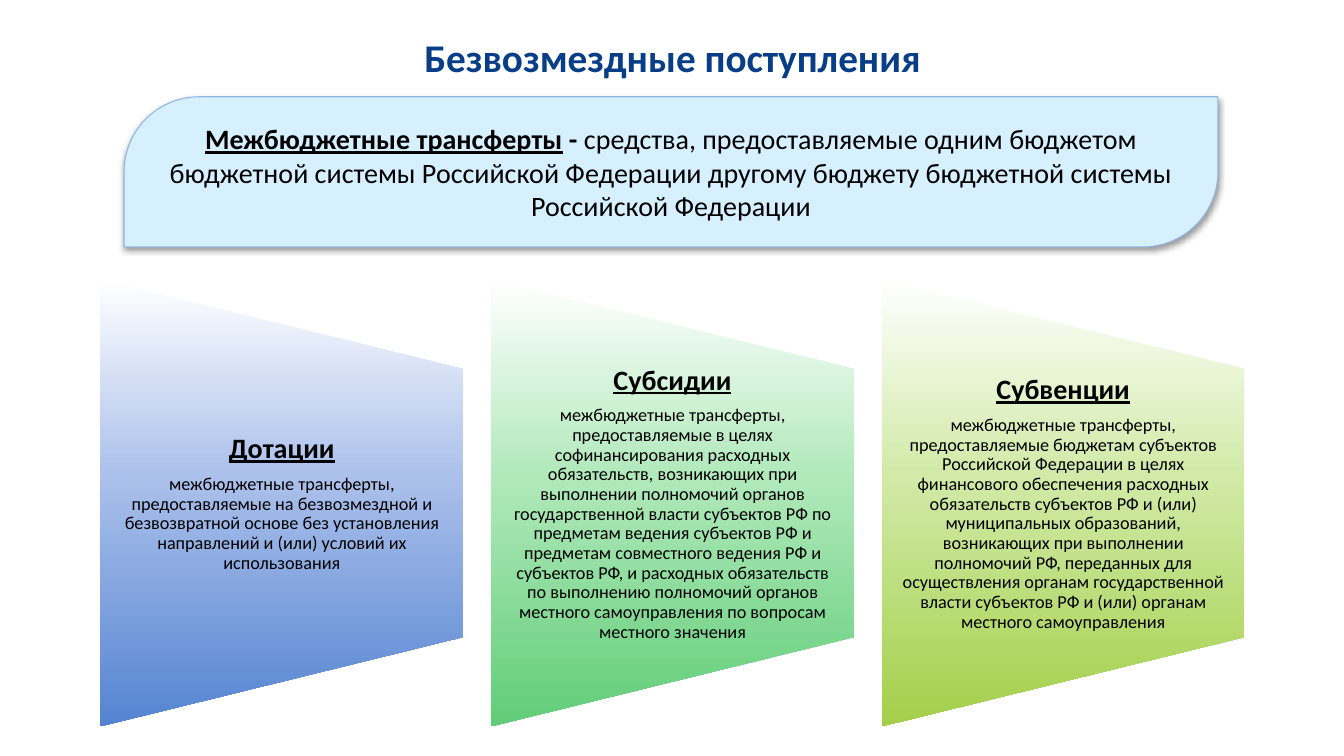
"""Build a slide that explains the three kinds of interbudgetary transfers."""
from copy import deepcopy
from dataclasses import dataclass

from lxml import etree
from pptx import Presentation
from pptx import util as u
from pptx.dml.color import RGBColor
from pptx.enum import shapes, text
from pptx.oxml import ns

FONT = "Calibri"
COLORS = {
    "title": "073E87",
    "text": "000000",
    "banner": "D6F0FF",
    "border": "8FB5E5",
    "shadow": "000000",
    "fade": "FFFFFF",
}
FIRST_LEFT, PITCH = 0.58, 3.875
PANEL_TOP, PANEL_LENGTH, PANEL_WIDTH = 3.19, 4.43, 3.6
TEXT_TOP, TEXT_HEIGHT = 3.67, 2.66


@dataclass
class Transfer:
    name: str
    meaning: str
    middle: str
    bottom: str


TRANSFERS = [
    Transfer(
        "Дотации",
        "межбюджетные трансферты, предоставляемые на безвозмездной и безвозвратной "
        "основе без установления направлений и (или) условий их использования",
        "ABC0EB", "5484D1",
    ),
    Transfer(
        "Субсидии",
        "межбюджетные трансферты, предоставляемые в целях софинансирования расходных "
        "обязательств, возникающих при выполнении полномочий органов государственной "
        "власти субъектов РФ по предметам ведения субъектов РФ и предметам совместного "
        "ведения РФ и субъектов РФ, и расходных обязательств по выполнению полномочий "
        "органов местного самоуправления по вопросам местного значения",
        "B1E9BB", "61CD78",
    ),
    Transfer(
        "Субвенции",
        "межбюджетные трансферты, предоставляемые бюджетам субъектов Российской "
        "Федерации в целях финансового обеспечения расходных обязательств субъектов РФ "
        "и (или) муниципальных образований, возникающих при выполнении полномочий РФ, "
        "переданных для осуществления органам государственной власти субъектов РФ "
        "и (или) органам местного самоуправления",
        "D1EAA7", "A4CF4A",
    ),
]


def style(span, size: float, color: str = "text", bold: bool = False,
          underline: bool = False) -> None:
    span.font.name = FONT
    span.font.size = u.Pt(size)
    span.font.bold = bold
    span.font.underline = underline
    span.font.color.rgb = RGBColor.from_string(COLORS[color])


def add_title(page) -> None:
    box = page.shapes.add_textbox(u.Inches(4.08), u.Inches(0.28),
                                  u.Inches(5.18), u.Inches(0.57))
    frame = box.text_frame
    frame.word_wrap = False
    frame.auto_size = text.MSO_AUTO_SIZE.SHAPE_TO_FIT_TEXT
    frame.text = "Безвозмездные поступления"
    para = frame.paragraphs[0]
    para.alignment = text.PP_ALIGN.CENTER
    style(para.runs[0], 28, "title", bold=True)


def add_shadow(shape) -> None:
    shape.shadow.inherit = False
    effects = shape._element.spPr.find(ns.qn("a:effectLst"))
    shadow = etree.SubElement(effects, ns.qn("a:outerShdw"), blurRad=str(u.Pt(4)),
                              dist=str(u.Pt(2)), dir="5400000", rotWithShape="0")
    color = etree.SubElement(shadow, ns.qn("a:srgbClr"), val=COLORS["shadow"])
    etree.SubElement(color, ns.qn("a:alpha"), val="38000")


def add_banner(page) -> None:
    banner = page.shapes.add_shape(
        shapes.MSO_SHAPE.ROUND_2_DIAG_RECTANGLE,
        u.Inches(1.23), u.Inches(0.96), u.Inches(10.85), u.Inches(1.49))
    banner.adjustments[0] = 0.5
    banner.adjustments[1] = 0
    banner.fill.solid()
    banner.fill.fore_color.rgb = RGBColor.from_string(COLORS["banner"])
    banner.line.color.rgb = RGBColor.from_string(COLORS["border"])
    banner.line.width = u.Pt(0.75)
    add_shadow(banner)
    frame = banner.text_frame
    frame.word_wrap = True
    frame.vertical_anchor = text.MSO_ANCHOR.MIDDLE
    para = frame.paragraphs[0]
    para.alignment = text.PP_ALIGN.CENTER
    for wording, bold, underline in (
        ("Межбюджетные трансферты", True, True),
        (" - ", True, False),
        ("средства, предоставляемые одним бюджетом бюджетной системы Российской "
         "Федерации другому бюджету бюджетной системы Российской Федерации", False, False),
    ):
        span = para.add_run()
        span.text = wording
        style(span, 20, bold=bold, underline=underline)


def fill_downward(shape, middle: str, bottom: str) -> None:
    shape.fill.gradient()
    shape.fill.gradient_angle = 270
    gradient = shape._element.spPr.find(ns.qn("a:gradFill"))
    gradient.set("rotWithShape", "0")
    stop_list = gradient.find(ns.qn("a:gsLst"))
    stop_list.append(deepcopy(stop_list[-1]))
    stops = ((0, COLORS["fade"]), (0.44, middle), (1, bottom))
    for stop, (position, color) in zip(shape.fill.gradient_stops, stops):
        stop.position = position
        stop.color.rgb = RGBColor.from_string(color)


def add_transfer(page, transfer: Transfer, left: float) -> None:
    panel = page.shapes.add_shape(
        shapes.MSO_SHAPE.FLOWCHART_MANUAL_OPERATION, u.Inches(left),
        u.Inches(PANEL_TOP), u.Inches(PANEL_LENGTH), u.Inches(PANEL_WIDTH))
    panel.rotation = 270
    panel.shadow.inherit = False
    panel.line.fill.background()
    fill_downward(panel, transfer.middle, transfer.bottom)

    text_left = left + (PANEL_LENGTH - PANEL_WIDTH) / 2
    box = page.shapes.add_textbox(u.Inches(text_left), u.Inches(TEXT_TOP),
                                  u.Inches(PANEL_WIDTH), u.Inches(TEXT_HEIGHT))
    frame = box.text_frame
    frame.word_wrap = True
    frame.vertical_anchor = text.MSO_ANCHOR.MIDDLE
    frame.margin_left = frame.margin_right = u.Inches(0.14)
    frame.margin_top = frame.margin_bottom = 0
    frame.text = f"{transfer.name}\n{transfer.meaning}"
    for para, size, strong in zip(frame.paragraphs, (20, 13), (True, False)):
        para.alignment = text.PP_ALIGN.CENTER
        para.line_spacing = 0.9
        para.space_after = u.Pt(size * 0.35)
        style(para.runs[0], size, bold=strong, underline=strong)


def main() -> None:
    deck = Presentation()
    deck.slide_width, deck.slide_height = u.Inches(13.33), u.Inches(7.5)
    page = deck.slides.add_slide(deck.slide_layouts[6])
    add_title(page)
    add_banner(page)
    for index, transfer in enumerate(TRANSFERS):
        add_transfer(page, transfer, FIRST_LEFT + index * PITCH)
    deck.save("out.pptx")


if __name__ == "__main__":
    main()
